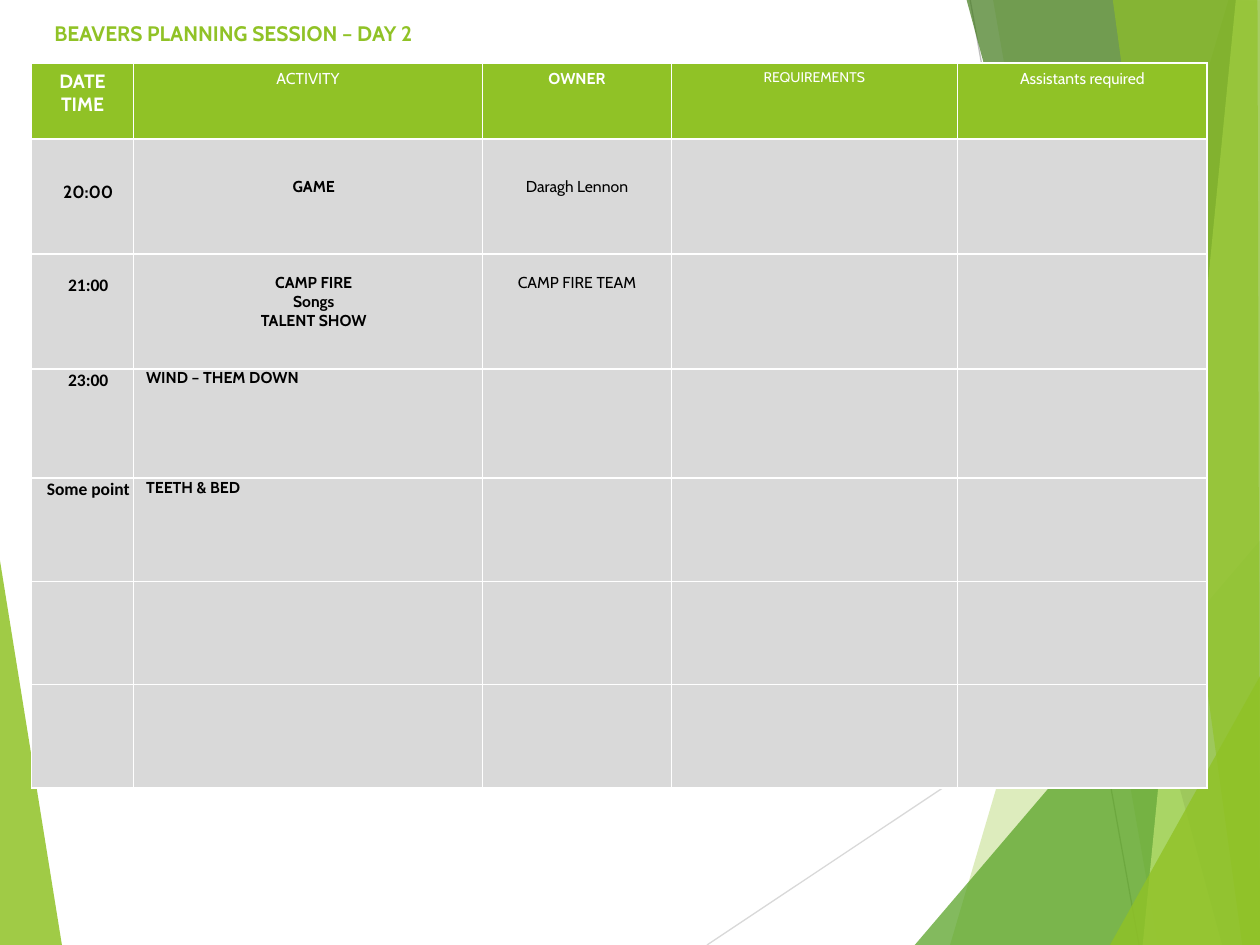
from dataclasses import dataclass

from lxml import etree
from pptx import Presentation
from pptx import util as u
from pptx.dml.color import RGBColor
from pptx.enum import shapes, text
from pptx.oxml.ns import qn

LIME = RGBColor(0x90, 0xC2, 0x26)
GREEN = RGBColor(0x54, 0xA0, 0x21)
DARK_GREEN = RGBColor(0x3F, 0x78, 0x19)
PALE_GREEN = RGBColor(0xC0, 0xE4, 0x74)
GREY = RGBColor(0xD9, 0xD9, 0xD9)
MID_GREY = RGBColor(0xBF, 0xBF, 0xBF)
WHITE = RGBColor(0xFF, 0xFF, 0xFF)
BLACK = RGBColor(0, 0, 0)

CENTER, LEFT = text.PP_ALIGN.CENTER, text.PP_ALIGN.LEFT
RIGHT_EDGE, TOP_EDGE, BOTTOM_EDGE = 720.7, -0.7, 540

# Outline points, colour and opacity in percent
LEFT_FACET = ([(-0.7, 316), (35.5, 540.7), (-0.7, BOTTOM_EDGE)], LIME, 85)
LINES = [
    ((404, 540), (720.7, 329), GREY),
    ((554.4, 0), (650.9, 540), MID_GREY),
]
RIGHT_FACETS = [
    ([(702, 0), (542.9, 540), (721.4, 540.7), (720.7, 0.7)], LIME, 30),
    ([(567.4, TOP_EDGE), (661.7, BOTTOM_EDGE), (RIGHT_EDGE, BOTTOM_EDGE), (RIGHT_EDGE, TOP_EDGE)], LIME, 20),
    ([(522.7, BOTTOM_EDGE), (720, 308.9), (RIGHT_EDGE, BOTTOM_EDGE)], GREEN, 72),
    ([(552.2, TOP_EDGE), (698.4, BOTTOM_EDGE), (RIGHT_EDGE, BOTTOM_EDGE), (RIGHT_EDGE, TOP_EDGE)], DARK_GREEN, 70),
    ([(706.3, TOP_EDGE), (653, BOTTOM_EDGE), (RIGHT_EDGE, BOTTOM_EDGE), (720, TOP_EDGE)], PALE_GREEN, 70),
    ([(635.8, TOP_EDGE), (709.9, BOTTOM_EDGE), (720, BOTTOM_EDGE), (718.6, TOP_EDGE)], LIME, 65),
    ([(634.3, BOTTOM_EDGE), (RIGHT_EDGE, 385.2), (RIGHT_EDGE, BOTTOM_EDGE)], LIME, 80),
]


@dataclass
class Entry:
    """Content of one table cell; top and right are margins in points."""
    lines: str
    size: float = 9
    bold: bool = True
    font: str = "Cabin"
    align: int = CENTER
    top: float = 0
    right: float = 0.72


COLUMN_WIDTHS = [58.3, 199.4, 108, 163.4, 142.7]
ROW_HEIGHTS = [43.4, 65.7, 65.7, 62.5, 59, 59, 59]
HEADER = [
    Entry("DATE\nTIME", 11, top=3.6, right=7.2),
    Entry("ACTIVITY", bold=False, top=3.6, right=7.2),
    Entry("OWNER", top=3.6, right=7.2),
    Entry("REQUIREMENTS", 8, bold=False, top=3.6, right=7.2),
    Entry("Assistants required", bold=False, top=3.6, right=7.2),
]
SESSIONS = [
    [Entry("20:00", 10, top=24.3), Entry("GAME", top=21.9),
     Entry("Daragh Lennon", bold=False, top=21.9, right=7.2)],
    [Entry("21:00", 10, font="Calibri", top=12.2), Entry("CAMP FIRE\nSongs\nTALENT SHOW", top=11),
     Entry("CAMP FIRE TEAM", bold=False, top=11, right=7.2)],
    [Entry("23:00", 10, font="Calibri", top=0.72), Entry("WIND – THEM DOWN", align=LEFT)],
    [Entry("Some point", 10, font="Calibri", top=0.72), Entry("TEETH & BED", align=LEFT)],
]


class PlanningSlide:
    def __init__(self, presentation):
        self.slide = presentation.slides.add_slide(presentation.slide_layouts[5])

    def facet(self, points, color, opacity):
        """Add a translucent polygon of the background."""
        corners = [(u.Pt(x), u.Pt(y)) for x, y in points]
        builder = self.slide.shapes.build_freeform(*corners[0])
        builder.add_line_segments(corners[1:], close=True)
        shape = builder.convert_to_shape()
        shape.shadow.inherit = False
        shape.line.fill.background()
        shape.fill.solid()
        shape.fill.fore_color.rgb = color
        color_element = shape.element.spPr.find(qn("a:solidFill"))[0]
        etree.SubElement(color_element, qn("a:alpha"), val=str(opacity * 1000))

    def line(self, start, end, color):
        connector = self.slide.shapes.add_connector(
            shapes.MSO_CONNECTOR.STRAIGHT, *(u.Pt(value) for value in start + end))
        connector.line.color.rgb = color
        connector.line.width = u.Pt(0.75)
        etree.SubElement(connector.element.spPr, qn("a:effectLst"))

    def run(self, paragraph, words, size, color, bold=True, font="Cabin"):
        run = paragraph.add_run()
        run.text = words
        run.font.name, run.font.size, run.font.bold = font, u.Pt(size), bold
        run.font.color.rgb = color

    def title(self, words):
        """Format the title placeholder and bring it to the front."""
        shape = self.slide.shapes.title
        shape.left, shape.top, shape.width, shape.height = u.Pt(23.8), u.Pt(-5.8), u.Pt(666), u.Pt(48.2)
        frame = shape.text_frame
        frame.word_wrap = True
        frame.auto_size = text.MSO_AUTO_SIZE.NONE
        frame.vertical_anchor = text.MSO_ANCHOR.TOP
        frame.margin_top = u.Pt(17.5)
        frame.paragraphs[0].alignment = LEFT
        self.run(frame.paragraphs[0], words, 12, LIME)
        self.slide.shapes.element.append(shape.element)

    def table(self, left, top, widths, heights):
        frame = self.slide.shapes.add_table(
            len(heights), len(widths), u.Pt(left), u.Pt(top), u.Pt(sum(widths)), u.Pt(sum(heights)))
        for column, width in zip(frame.table.columns, widths):
            column.width = u.Pt(width)
        for row, height in zip(frame.table.rows, heights):
            row.height = u.Pt(height)
        return frame.table

    def cell(self, cell, fill):
        """Fill a cell and give it white borders."""
        cell.fill.solid()
        cell.fill.fore_color.rgb = fill
        properties = cell._tc.get_or_add_tcPr()
        for index, side in enumerate(("lnL", "lnR", "lnT", "lnB")):
            border = etree.Element(qn("a:" + side), w=str(u.Pt(1)))
            solid = etree.SubElement(border, qn("a:solidFill"))
            etree.SubElement(solid, qn("a:srgbClr"), val=str(WHITE))
            properties.insert(index, border)

    def entry(self, cell, entry, color):
        cell.margin_left, cell.margin_right = u.Pt(7.2), u.Pt(entry.right)
        cell.margin_top, cell.margin_bottom = u.Pt(entry.top), u.Pt(0)
        frame = cell.text_frame
        for index, words in enumerate(entry.lines.split("\n")):
            paragraph = frame.add_paragraph() if index else frame.paragraphs[0]
            paragraph.alignment = entry.align
            self.run(paragraph, words, entry.size, color, entry.bold, entry.font)


def main():
    presentation = Presentation()
    presentation.slide_width, presentation.slide_height = u.Pt(720), u.Pt(540)
    page = PlanningSlide(presentation)

    page.facet(*LEFT_FACET)
    for line in LINES:
        page.line(*line)
    for facet in RIGHT_FACETS:
        page.facet(*facet)

    page.title("BEAVERS PLANNING SESSION – DAY 2")
    table = page.table(18, 36, COLUMN_WIDTHS, ROW_HEIGHTS)
    for row_index, row in enumerate(table.rows):
        for cell in row.cells:
            page.cell(cell, GREY if row_index else LIME)
    for row_index, entries in enumerate([HEADER] + SESSIONS):
        for column_index, entry in enumerate(entries):
            page.entry(table.cell(row_index, column_index), entry, BLACK if row_index else WHITE)

    presentation.save("out.pptx")


if __name__ == "__main__":
    main()
